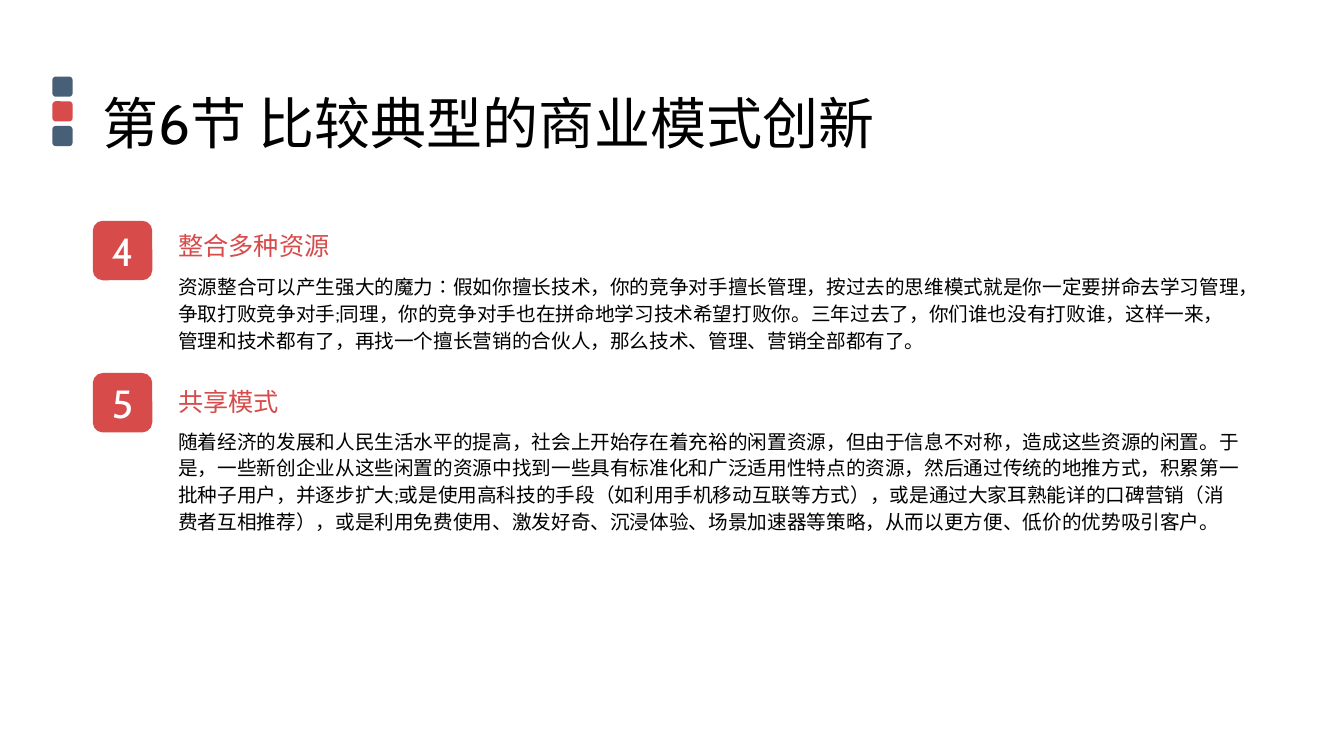
from pptx import Presentation
from pptx.dml.color import RGBColor
from pptx.enum.shapes import MSO_SHAPE
from pptx.enum.text import MSO_ANCHOR, PP_ALIGN
from pptx.util import Inches, Pt

ROUNDED = MSO_SHAPE.ROUNDED_RECTANGLE
TOP, MIDDLE = MSO_ANCHOR.TOP, MSO_ANCHOR.MIDDLE
CENTER = PP_ALIGN.CENTER

RED = RGBColor(0xD7, 0x4B, 0x4B)
SLATE = RGBColor(0x47, 0x5F, 0x77)
BLACK = RGBColor(0, 0, 0)
WHITE = RGBColor(0xFF, 0xFF, 0xFF)

TITLE = "第6节 比较典型的商业模式创新"
# Number, badge top, heading top, heading width, heading, body top, body height, body
SECTIONS = [
    ("4", 2.19, 2.24, 1.7, "整合多种资源", 2.65, 0.91,
     "资源整合可以产生强大的魔力∶假如你擅长技术，你的竞争对手擅长管理，"
     "按过去的思维模式就是你一定要拼命去学习管理，争取打败竞争对手;同理，"
     "你的竞争对手也在拼命地学习技术希望打败你。三年过去了，你们谁也没有打败谁，"
     "这样一来，管理和技术都有了，再找一个擅长营销的合伙人，"
     "那么技术、管理、营销全部都有了。"),
    ("5", 3.7, 3.78, 1.2, "共享模式", 4.18, 1.17,
     "随着经济的发展和人民生活水平的提高，社会上开始存在着充裕的闲置资源，"
     "但由于信息不对称，造成这些资源的闲置。于是，一些新创企业从这些闲置的资源中"
     "找到一些具有标准化和广泛适用性特点的资源，然后通过传统的地推方式，"
     "积累第一批种子用户，并逐步扩大;或是使用高科技的手段（如利用手机移动互联等方式），"
     "或是通过大家耳熟能详的口碑营销（消费者互相推荐），或是利用免费使用、激发好奇、"
     "沉浸体验、场景加速器等策略，从而以更方便、低价的优势吸引客户。"),
]


class SlideBuilder:
    font_name = "Cabin"

    def __init__(self, slide):
        self.slide = slide

    def fill_text(self, shape, text, size, color):
        """Put one styled paragraph in the shape and return it."""
        paragraph = shape.text_frame.paragraphs[0]
        paragraph.text = text
        font = paragraph.runs[0].font
        font.name, font.size = self.font_name, Pt(size)
        font.color.rgb = color
        return paragraph

    def rounded_square(self, left, top, side, color):
        shape = self.slide.shapes.add_shape(
            ROUNDED, Inches(left), Inches(top), Inches(side), Inches(side))
        shape.adjustments[0] = 0.167
        shape.shadow.inherit = False
        shape.fill.solid()
        shape.fill.fore_color.rgb = color
        shape.line.fill.background()
        return shape

    def badge(self, left, top, number):
        shape = self.rounded_square(left, top, 0.59, RED)
        shape.text_frame.vertical_anchor = MIDDLE
        self.fill_text(shape, number, 28, WHITE).alignment = CENTER

    def text_box(self, left, top, width, height, text, size, color, wrap=True, anchor=TOP):
        box = self.slide.shapes.add_textbox(
            Inches(left), Inches(top), Inches(width), Inches(height))
        box.text_frame.word_wrap = wrap
        box.text_frame.vertical_anchor = anchor
        return self.fill_text(box, text, size, color)


def main():
    presentation = Presentation()
    presentation.slide_width = Inches(13.33)
    presentation.slide_height = Inches(7.5)
    builder = SlideBuilder(presentation.slides.add_slide(presentation.slide_layouts[6]))

    for index, color in enumerate((SLATE, RED, SLATE)):
        builder.rounded_square(0.52, 0.76 + index * 0.245, 0.2, color)

    title = builder.text_box(0.92, 0.66, 11.5, 1.18, TITLE, 40, BLACK, anchor=MIDDLE)
    title.line_spacing = 0.9

    for (number, badge_top, heading_top, heading_width, heading,
         body_top, body_height, body) in SECTIONS:
        builder.badge(0.92, badge_top, number)
        builder.text_box(1.67, heading_top, heading_width, 0.4, heading, 18, RED, wrap=False)
        paragraph = builder.text_box(1.67, body_top, 10.74, body_height, body, 14, BLACK)
        paragraph.line_spacing = 1.14
        paragraph.space_after = Pt(10)

    presentation.save("out.pptx")


if __name__ == "__main__":
    main()
